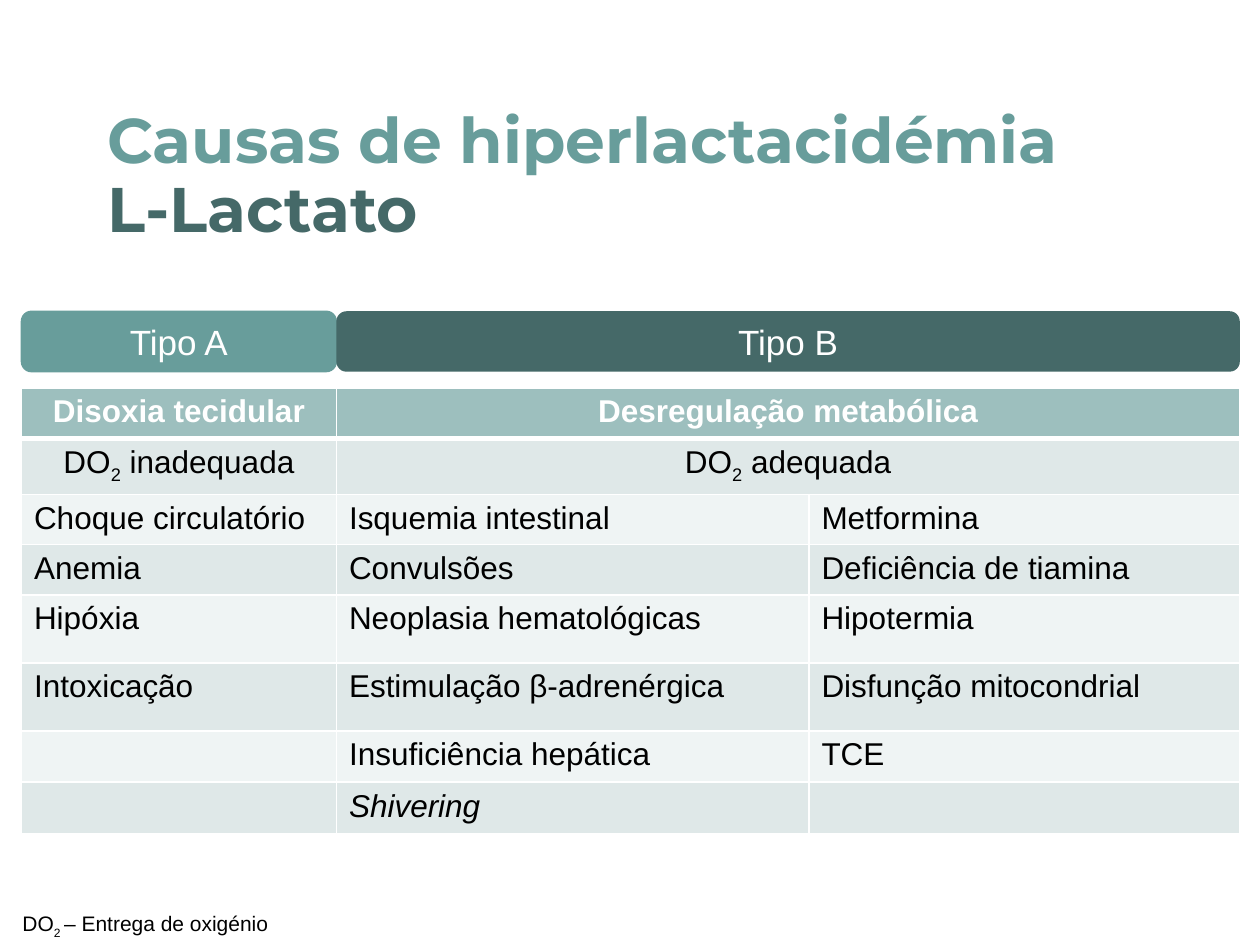
from copy import deepcopy

from lxml import etree
from pptx import Presentation
from pptx.dml.color import RGBColor
from pptx.enum import shapes, text
from pptx.oxml import ns
from pptx.util import Pt

TEAL, DARK, WHITE, BLACK = "689D9B", "456968", "FFFFFF", "000000"
HEADER, BANDS = "9DBFBE", ("EFF4F4", "DFE8E8")
LEFT = 12.24
COLUMNS = (180, 270, 246.24)
ROW_HEIGHTS = (28.8, 31.9, 28.8, 28.8, 38.88, 38.88, 28.8, 28.8)
CAUSES = (
    ("Choque circulatório", "Isquemia intestinal", "Metformina"),
    ("Anemia", "Convulsões", "Deficiência de tiamina"),
    ("Hipóxia", "Neoplasia hematológicas", "Hipotermia"),
    ("Intoxicação", "Estimulação β-adrenérgica", "Disfunção mitocondrial"),
    ("", "Insuficiência hepática", "TCE"),
    ("", "Shivering", ""),
)


def rgb(code):
    """Return the colour for a hex string."""
    return RGBColor.from_string(code)


def add_run(paragraph, words, size, color=BLACK, bold=False, italic=False,
            font="Arial", subscript=False):
    """Add one formatted run to a paragraph."""
    run = paragraph.add_run()
    run.text = words
    run.font.name, run.font.size = font, Pt(size)
    run.font.bold, run.font.italic = bold, italic
    run.font.color.rgb = rgb(color)
    if subscript:
        run._r.get_or_add_rPr().set("baseline", "-25000")
    return run


def add_oxygen(paragraph, subscript, rest, size):
    """Write DO2 with its subscript, followed by the rest of the phrase."""
    add_run(paragraph, "DO", size)
    add_run(paragraph, subscript, size, subscript=True)
    add_run(paragraph, rest, size)


def write_title(slide):
    """Place the two-colour title."""
    title = slide.shapes.title
    title.left, title.top, title.width, title.height = map(Pt, (54, 38.16, 612, 126.72))
    frame = title.text_frame
    frame.auto_size = text.MSO_AUTO_SIZE.NONE
    frame.vertical_anchor = text.MSO_ANCHOR.MIDDLE
    heading = frame.paragraphs[0]
    heading.alignment = text.PP_ALIGN.LEFT
    heading.line_spacing = 0.9
    first = add_run(heading, "Causas de hiperlactacidémia", 36, TEAL, True, font="Montserrat")
    heading.add_line_break()
    heading._p.find(ns.qn("a:br")).append(deepcopy(first._r.rPr))
    add_run(heading, "L-Lactato", 36, DARK, True, font="Montserrat")


def add_type_banner(slide, left, width, label, color, outlined):
    """Add a rounded banner naming a type of hyperlactataemia."""
    banner = slide.shapes.add_shape(shapes.MSO_SHAPE.ROUNDED_RECTANGLE,
                                    Pt(left), Pt(177.84), Pt(width), Pt(34.56))
    banner.shadow.inherit = False
    banner.fill.solid()
    banner.fill.fore_color.rgb = rgb(color)
    if outlined:
        banner.line.color.rgb = rgb(color)
        banner.line.width = Pt(0.75)
    else:
        banner.line.fill.background()
    name = banner.text_frame.paragraphs[0]
    name.alignment = text.PP_ALIGN.CENTER
    add_run(name, label, 20, WHITE)


def style_cell(cell, color, bottom):
    """Fill a cell and give it white borders."""
    properties = cell._tc.get_or_add_tcPr()
    for side, width in (("L", 1), ("R", 1), ("T", 1), ("B", bottom)):
        border = etree.SubElement(properties, ns.qn(f"a:ln{side}"), w=str(Pt(width)))
        solid = etree.SubElement(border, ns.qn("a:solidFill"))
        etree.SubElement(solid, ns.qn("a:srgbClr"), val=WHITE)
    cell.fill.solid()
    cell.fill.fore_color.rgb = rgb(color)


def add_causes_table(slide):
    """Add the table of causes under the type banners."""
    table = slide.shapes.add_table(len(ROW_HEIGHTS), len(COLUMNS), Pt(LEFT), Pt(221.76),
                                   Pt(sum(COLUMNS)), Pt(sum(ROW_HEIGHTS))).table
    for column, width in zip(table.columns, COLUMNS):
        column.width = Pt(width)
    for index, (row, height) in enumerate(zip(table.rows, ROW_HEIGHTS)):
        row.height = Pt(height)
        for cell in row.cells:
            style_cell(cell, BANDS[index % 2] if index else HEADER, 1 if index else 3)
    for index in (0, 1):
        table.cell(index, 1).merge(table.cell(index, 2))
    groups = (("Disoxia tecidular", " inadequada"), ("Desregulação metabólica", " adequada"))
    for index, (mechanism, delivery) in enumerate(groups):
        header, oxygen = (table.cell(row, index).text_frame.paragraphs[0] for row in (0, 1))
        header.alignment = oxygen.alignment = text.PP_ALIGN.CENTER
        add_run(header, mechanism, 18, WHITE, True)
        add_oxygen(oxygen, "2", delivery, 18)
    for row, causes in enumerate(CAUSES, 2):
        for column, cause in enumerate(causes):
            if cause:
                add_run(table.cell(row, column).text_frame.paragraphs[0], cause, 18,
                        italic=cause == "Shivering")


def add_footnote(slide):
    """Explain the abbreviation at the foot of the slide."""
    note = slide.shapes.add_textbox(Pt(5.76), Pt(516.96), Pt(360), Pt(21.6))
    note.text_frame.word_wrap = True
    add_oxygen(note.text_frame.paragraphs[0], "2 ", "– Entrega de oxigénio", 12)


def main():
    """Build and save the slide."""
    deck = Presentation()
    deck.slide_width, deck.slide_height = Pt(720), Pt(540)
    slide = deck.slides.add_slide(deck.slide_layouts[5])
    write_title(slide)
    add_type_banner(slide, LEFT, COLUMNS[0], "Tipo A", TEAL, True)
    add_type_banner(slide, LEFT + COLUMNS[0], sum(COLUMNS[1:]), "Tipo B", DARK, False)
    add_causes_table(slide)
    add_footnote(slide)
    deck.save("out.pptx")


if __name__ == "__main__":
    main()
